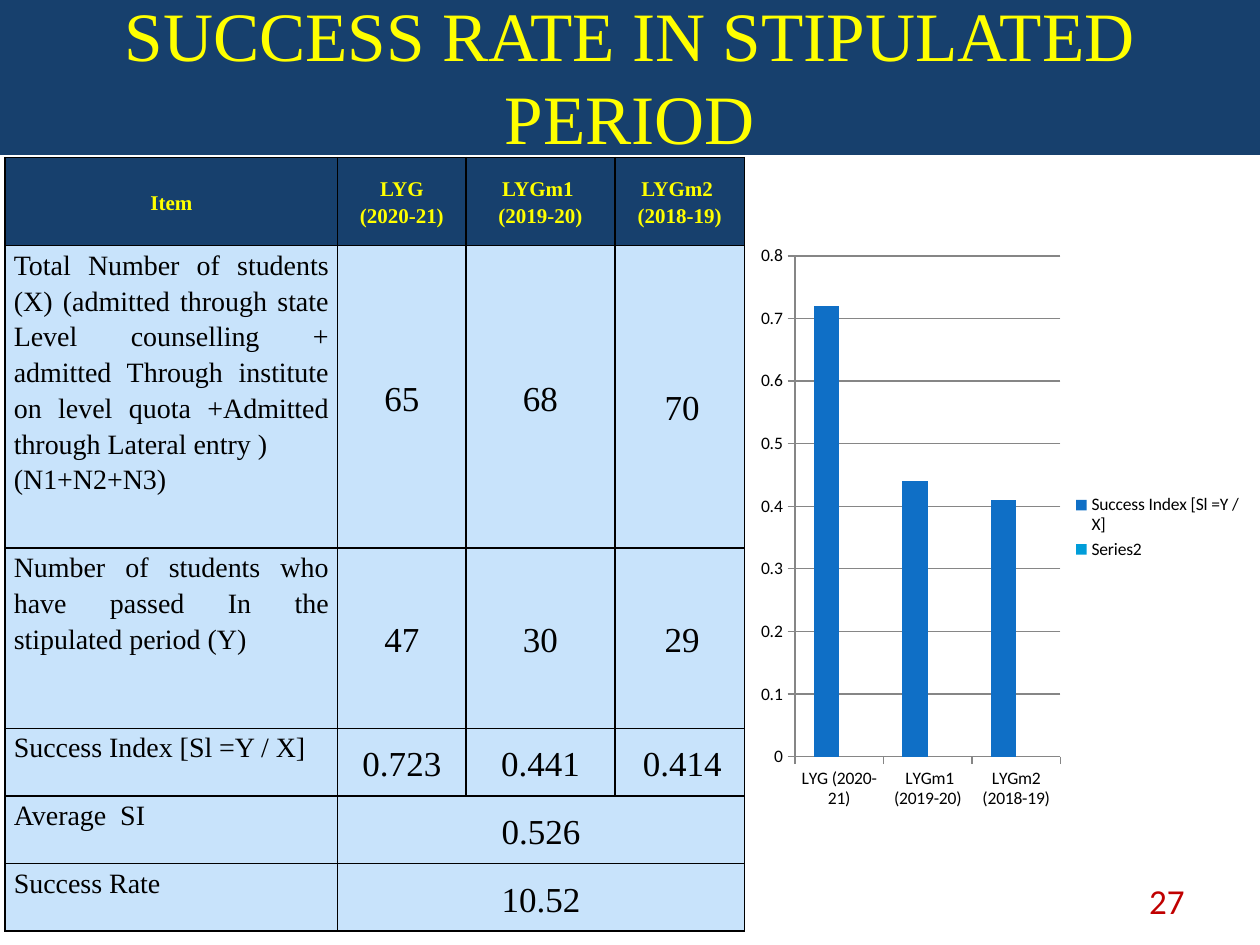
from pptx import Presentation
from pptx.chart.data import CategoryChartData
from pptx.dml.color import RGBColor
from pptx.enum.chart import XL_CHART_TYPE, XL_LEGEND_POSITION, XL_TICK_MARK
from pptx.enum.shapes import MSO_SHAPE
from pptx.enum.text import MSO_ANCHOR, PP_ALIGN
from pptx.oxml import parse_xml
from pptx.oxml.ns import nsdecls
from pptx.util import Inches, Pt

COLORS = {"navy": "17406D", "yellow": "FFFF00", "pale": "C8E3FB", "black": "000000",
          "blue": "0F6FC6", "cyan": "009DD9", "red": "C00000", "grey": "868686"}
SERIF, SANS = "Times New Roman", "Calibri"


def rgb(name):
    return RGBColor.from_string(COLORS[name])


def style(tf, align, size, color, font=SERIF, bold=False, spacing=None):
    for p in tf.paragraphs:
        p.alignment = align
        p.line_spacing = spacing
        for r in p.runs:
            r.font.size, r.font.name, r.font.bold = Pt(size), font, bold
            r.font.color.rgb = rgb(color)


prs = Presentation()
prs.slide_width, prs.slide_height = Inches(10), Inches(7.5)
s = prs.slides.add_slide(prs.slide_layouts[6])

# Title band
sp = s.shapes.add_shape(MSO_SHAPE.RECTANGLE, 0, Inches(-0.03), Inches(10), Inches(1.26))
sp.shadow.inherit = False
sp.fill.solid()
sp.fill.fore_color.rgb = rgb("navy")
sp.line.fill.background()
tf = sp.text_frame
tf.word_wrap = True
tf.vertical_anchor = MSO_ANCHOR.MIDDLE
tf.margin_top = tf.margin_bottom = 0
tf.text = "SUCCESS RATE IN STIPULATED PERIOD"
style(tf, PP_ALIGN.CENTER, 39.6, "yellow")

# Success rate table: the three short rows share the remaining height
rows = [
    ["Item", "LYG\n(2020-21)", "LYGm1 \n(2019-20)", "LYGm2 \n(2018-19)"],
    ["Total Number of students (X) (admitted through state Level counselling + "
     "admitted Through institute on level quota +Admitted through Lateral entry )\n"
     "(N1+N2+N3)", "65", "68", "70"],
    ["Number of students who have passed In the stipulated period (Y)", "47", "30", "29"],
    ["Success Index [Sl =Y / X]", "0.723", "0.441", "0.414"],
    ["Average  SI", "0.526", "", ""],
    ["Success Rate", "10.52", "", ""],
]
table_height = 6.14
col_widths = [2.64, 1.02, 1.18, 1.03]
tall_rows = [0.7, 2.4, 1.43]
row_heights = tall_rows + [(table_height - sum(tall_rows)) / 3] * 3
table = s.shapes.add_table(len(rows), len(col_widths), Inches(0.04), Inches(1.25),
                           Inches(sum(col_widths)), Inches(table_height)).table
for column, width in zip(table.columns, col_widths):
    column.width = Inches(width)
for row, height in zip(table.rows, row_heights):
    row.height = Inches(height)
for i in (4, 5):
    table.cell(i, 1).merge(table.cell(i, 3))

for i, texts in enumerate(rows):
    for j, text in enumerate(texts):
        cell = table.cell(i, j)
        cell.margin_left = cell.margin_right = Inches(0.07)
        cell.margin_top = cell.margin_bottom = 0
        # Borders come before the fill in the cell properties
        for side in ("lnL", "lnR", "lnT", "lnB"):
            cell._tc.get_or_add_tcPr().append(parse_xml(
                f'<a:{side} {nsdecls("a")} w="12700"><a:solidFill>'
                f'<a:srgbClr val="{COLORS["black"]}"/></a:solidFill></a:{side}>'))
        cell.fill.solid()
        cell.fill.fore_color.rgb = rgb("pale" if i else "navy")
        if cell.is_spanned:
            continue
        cell.text_frame.text = text
        if i == 0:
            look = (PP_ALIGN.CENTER, 12, "yellow")
        elif j == 0:
            look = (PP_ALIGN.JUSTIFY, 16, "black")
        else:
            look = (PP_ALIGN.CENTER, 20, "black")
        style(cell.text_frame, *look, bold=i == 0, spacing=1.15)
        label = i > 0 and j == 0
        cell.vertical_anchor = MSO_ANCHOR.TOP if label else MSO_ANCHOR.MIDDLE
        if i > 0 and j == 3:
            cell.text_frame.paragraphs[0]._p.get_or_add_pPr().set("marL", str(Inches(0.04)))
table.cell(1, 3).margin_top = Pt(10)

# Success index chart
data = CategoryChartData()
data.categories = ["LYG (2020-21)", " LYGm1 (2019-20)", "LYGm2 (2018-19)"]
data.add_series("Success Index [Sl =Y / X]", [0.72, 0.44, 0.41])
data.add_series("Series2", [None, None, None])
chart = s.shapes.add_chart(XL_CHART_TYPE.COLUMN_CLUSTERED, Inches(5.96), Inches(1.86),
                           Inches(4), Inches(4.65), data).chart
chart.has_title = False
chart.font.size, chart.font.name = Pt(10), SANS
chart.font.color.rgb = rgb("black")
chart.has_legend = True
chart.legend.position = XL_LEGEND_POSITION.RIGHT
chart.legend.include_in_layout = False
plot = chart.plots[0]
plot.vary_by_categories = False
plot.gap_width, plot.overlap = 150, 0
for series, color in zip(plot.series, ("blue", "cyan")):
    series.format.fill.solid()
    series.format.fill.fore_color.rgb = rgb(color)
value_axis = chart.value_axis
value_axis.minimum_scale, value_axis.maximum_scale, value_axis.major_unit = 0, 0.8, 0.1
value_axis.has_major_gridlines = True
for axis in (chart.category_axis, value_axis):
    axis.major_tick_mark = XL_TICK_MARK.OUTSIDE
    axis.format.line.color.rgb = rgb("grey")
value_axis.major_gridlines.format.line.color.rgb = rgb("grey")

# Page number
tb = s.shapes.add_textbox(Inches(7.17), Inches(6.95), Inches(2.33), Inches(0.4))
tf = tb.text_frame
tf.word_wrap = True
tf.vertical_anchor = MSO_ANCHOR.MIDDLE
tf.text = "27"
style(tf, PP_ALIGN.RIGHT, 20, "red", SANS)

prs.save("out.pptx")
